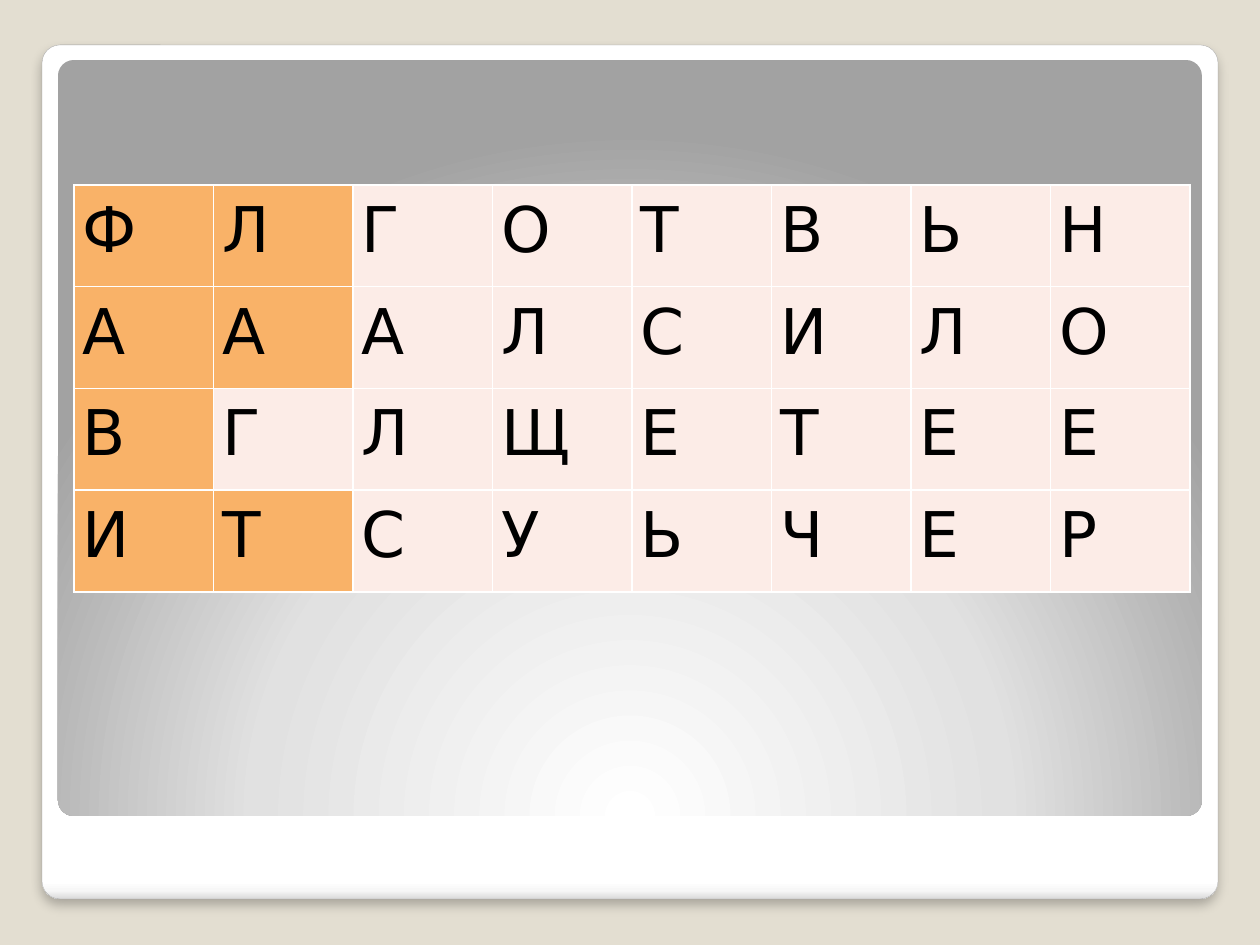
from dataclasses import dataclass

from lxml.etree import SubElement
from pptx import Presentation
from pptx.dml.color import RGBColor
from pptx.enum.shapes import MSO_SHAPE
from pptx.oxml import parse_xml
from pptx.oxml.ns import nsdecls, qn
from pptx.util import Pt

EMU_PER_PX = 914400 / 126
BLANK_LAYOUT = 6
LETTER_ROWS = ["ФЛГОТВЬН", "АААЛСИЛО", "ВГЛЩЕТЕЕ", "ИТСУЬЧЕР"]
MARKED_CELLS = {(0, 0), (0, 1), (1, 0), (1, 1), (2, 0), (3, 0), (3, 1)}


@dataclass(frozen=True)
class Theme:
    background: str = "E3DED1"
    frame_line: str = "A4A4A4"
    shadow: str = "000000"
    text: str = "000000"
    border: str = "FFFFFF"
    cell: str = "FCECE7"
    marked: str = "F9B268"
    frame_stops: tuple = ((0, "FFFFFF"), (98, "FFFFFF"), (99, "F7F7F7"), (100, "DADADA"))
    panel_stops: tuple = ((0, "FFFFFF"), (55, "E1E1E1"), (100, "A2A2A2"))
    font: str = "DejaVu Sans"
    letter_size: int = 36


THEME = Theme()


def px(length):
    return round(length * EMU_PER_PX)


def color(value):
    return RGBColor.from_string(value)


def set_gradient(shape, stops, direction):
    shape.fill.background()
    stop_xml = "".join(
        f'<a:gs pos="{position * 1000}"><a:srgbClr val="{value}"/></a:gs>'
        for position, value in stops
    )
    gradient = parse_xml(
        f'<a:gradFill {nsdecls("a")} rotWithShape="1">'
        f"<a:gsLst>{stop_xml}</a:gsLst>{direction}</a:gradFill>"
    )
    properties = shape._element.spPr
    properties.replace(properties.find(qn("a:noFill")), gradient)


def add_rounded_box(page, left, top, width, height, *, stops, direction):
    box = page.shapes.add_shape(
        MSO_SHAPE.ROUNDED_RECTANGLE, px(left), px(top), px(width), px(height)
    )
    box.adjustments[0] = 0.021
    box.shadow.inherit = False
    box.line.fill.background()
    set_gradient(box, stops, direction)
    return box


def add_shadow(shape, *, value, opacity, blur, distance, angle):
    effects = shape._element.spPr.find(qn("a:effectLst"))
    shadow = SubElement(
        effects, qn("a:outerShdw"), blurRad=str(Pt(blur)), dist=str(Pt(distance)),
        dir=str(angle * 60000), algn="t", rotWithShape="0",
    )
    shade = SubElement(shadow, qn("a:srgbClr"), val=value)
    SubElement(shade, qn("a:alpha"), val=str(opacity * 1000))


def write_text(frame, text, *, size, value, font):
    span = frame.paragraphs[0].add_run()
    span.text = text
    span.font.size = Pt(size)
    span.font.name = font
    span.font.color.rgb = color(value)


def set_borders(cell, *, value, width):
    properties = cell._tc.get_or_add_tcPr()
    for index, side in enumerate(("lnL", "lnR", "lnT", "lnB")):
        border = parse_xml(
            f'<a:{side} {nsdecls("a")} w="{Pt(width)}"><a:solidFill>'
            f'<a:srgbClr val="{value}"/></a:solidFill></a:{side}>'
        )
        properties.insert(index, border)


def format_cell(cell, letter, *, fill):
    cell.margin_left = cell.margin_right = px(9)
    cell.margin_top = cell.margin_bottom = px(9)
    cell.fill.solid()
    cell.fill.fore_color.rgb = color(fill)
    set_borders(cell, value=THEME.border, width=1)
    write_text(
        cell.text_frame, letter, size=THEME.letter_size, value=THEME.text, font=THEME.font
    )


def add_letter_table(page, left, top, width, height):
    table = page.shapes.add_table(
        len(LETTER_ROWS), len(LETTER_ROWS[0]), px(left), px(top), px(width), px(height)
    ).table
    table.first_row = False
    table.horz_banding = False
    for row, letters in enumerate(LETTER_ROWS):
        for column, letter in enumerate(letters):
            fill = THEME.marked if (row, column) in MARKED_CELLS else THEME.cell
            format_cell(table.cell(row, column), letter, fill=fill)


def main():
    deck = Presentation()
    deck.slide_width, deck.slide_height = px(1260), px(945)
    page = deck.slides.add_slide(deck.slide_layouts[BLANK_LAYOUT])
    page.background.fill.solid()
    page.background.fill.fore_color.rgb = color(THEME.background)

    frame = add_rounded_box(
        page, 42, 45, 1176, 854,
        stops=THEME.frame_stops, direction='<a:lin ang="5400000" scaled="0"/>',
    )
    frame.line.color.rgb = color(THEME.frame_line)
    frame.line.width = Pt(0.16)
    add_shadow(frame, value=THEME.shadow, opacity=25, blur=6, distance=4, angle=90)

    add_rounded_box(
        page, 58, 60, 1144, 756,
        stops=THEME.panel_stops,
        direction='<a:path path="circle">'
                  '<a:fillToRect l="50000" t="175000" r="50000" b="-75000"/></a:path>',
    )
    add_letter_table(page, 74, 185, 1116, 407)
    deck.save("out.pptx")


if __name__ == "__main__":
    main()
